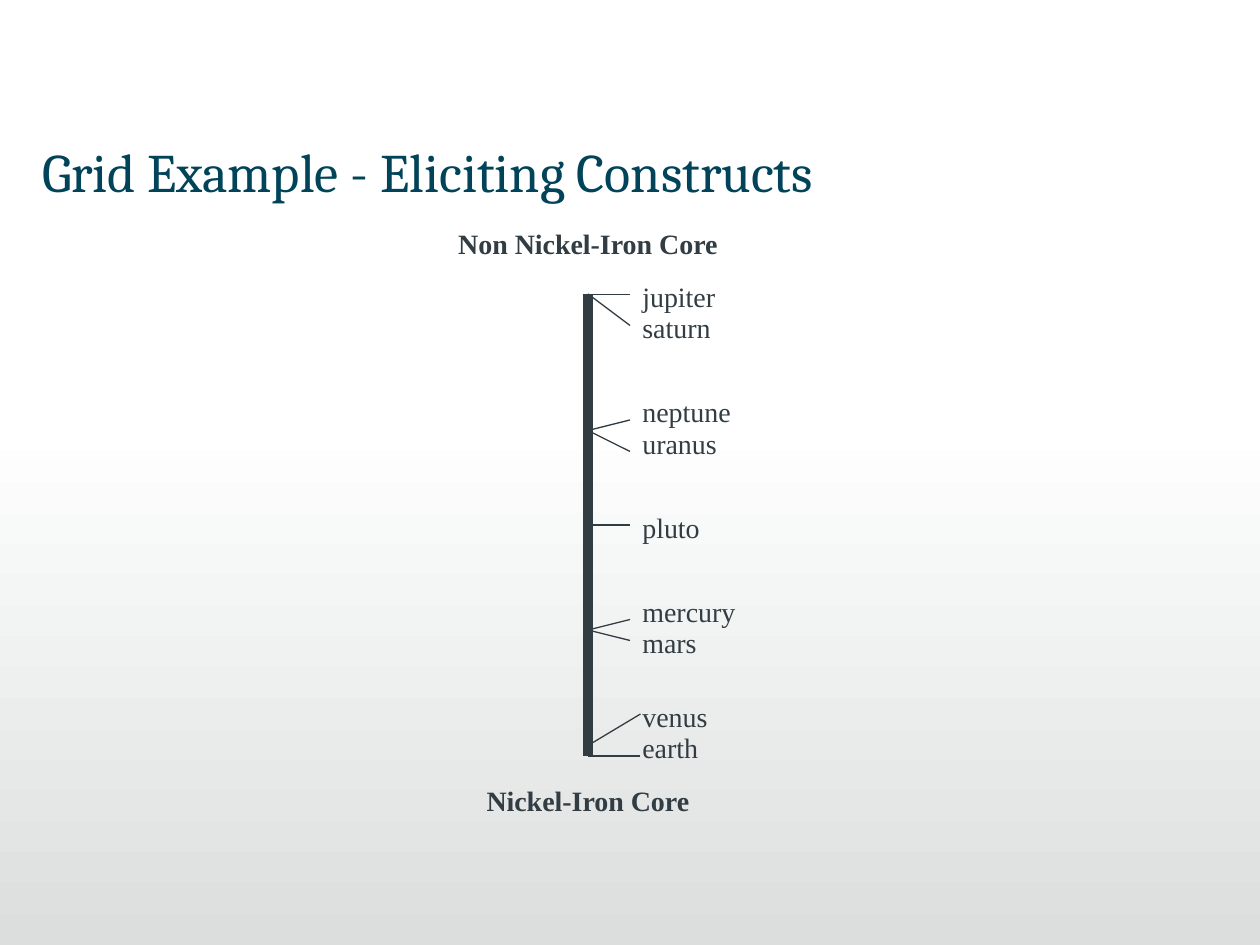
from dataclasses import dataclass

from lxml import etree
from pptx import Presentation
from pptx.dml.color import RGBColor
from pptx.enum.shapes import MSO_CONNECTOR, MSO_SHAPE
from pptx.enum.text import MSO_ANCHOR, MSO_AUTO_SIZE, PP_ALIGN
from pptx.oxml.ns import qn
from pptx.slide import Slide
from pptx.util import Pt

STRAIGHT = MSO_CONNECTOR.STRAIGHT
RECTANGLE = MSO_SHAPE.RECTANGLE
TOP, BOTTOM = MSO_ANCHOR.TOP, MSO_ANCHOR.BOTTOM
GROW, FIXED = MSO_AUTO_SIZE.SHAPE_TO_FIT_TEXT, MSO_AUTO_SIZE.NONE
LEFT, CENTER = PP_ALIGN.LEFT, PP_ALIGN.CENTER

INK, TITLE_INK = "323D43", "014359"
FADE_START, FADE_END = "FFFFFF", "DCDEDE"
AXIS_X, AXIS_TOP, AXIS_BOTTOM = 336, 168, 432
LABEL_X, LABEL_HEIGHT = 360, 26.6


@dataclass(frozen=True)
class Planet:
    """A planet's label and its tick on the construct axis."""

    name: str
    label_top: float
    axis_y: float
    tick_y: float
    tick_x: float = LABEL_X
    tick_weight: float = 0.75
    label_width: float = 66


@dataclass(frozen=True)
class Pole:
    """A heading at one end of the construct axis."""

    name: str
    left: float
    top: float
    width: float


PLANETS = [
    Planet("jupiter", 156, AXIS_TOP, 168, tick_weight=0.25),
    Planet("saturn", 174, AXIS_TOP, 186),
    Planet("neptune", 222, 246, 240),
    Planet("uranus", 240, 246, 258),
    Planet("pluto", 288, 300, 300),
    Planet("mercury", 336, 360, 354, label_width=84),
    Planet("mars", 354, 360, 366),
    Planet("venus", 396, 426, 408, tick_x=366),
    Planet("earth", 414, AXIS_BOTTOM, 432, tick_x=366),
]
POLES = [
    Pole("Non Nickel-Iron Core", 252, 126, 168),
    Pole("Nickel-Iron Core", 270, 444, 132),
]


def color(hex_value: str) -> RGBColor:
    """Turn a hex string into a colour."""
    return RGBColor.from_string(hex_value)


def add_text(slide: Slide, text: str, left: float, top: float, width: float,
             height: float = LABEL_HEIGHT, *, size: float = 16,
             font: str = "Times New Roman", ink: str = INK, bold: bool = False,
             align: PP_ALIGN = LEFT, anchor: MSO_ANCHOR = TOP,
             fit: MSO_AUTO_SIZE = GROW, inset: float = 7.2) -> None:
    """Add one line of formatted text."""
    box = slide.shapes.add_textbox(Pt(left), Pt(top), Pt(width), Pt(height))
    frame = box.text_frame
    frame.word_wrap = True
    frame.auto_size = fit
    frame.vertical_anchor = anchor
    frame.margin_left = Pt(inset)
    paragraph = frame.paragraphs[0]
    paragraph.text = text
    paragraph.alignment = align
    paragraph.font.name = font
    paragraph.font.size = Pt(size)
    paragraph.font.bold = bold
    paragraph.font.color.rgb = color(ink)


def add_line(slide: Slide, x1: float, y1: float, x2: float, y2: float,
             weight: float) -> None:
    """Add a straight line without a shadow."""
    line = slide.shapes.add_connector(STRAIGHT, Pt(x1), Pt(y1), Pt(x2), Pt(y2))
    line.line.color.rgb = color(INK)
    line.line.width = Pt(weight)
    etree.SubElement(line._element.spPr, qn("a:effectLst"))


def add_fade(slide: Slide) -> None:
    """Add the fading band behind the lower part of the slide."""
    band = slide.shapes.add_shape(RECTANGLE, Pt(-6.5), Pt(240), Pt(726.5), Pt(300))
    band.shadow.inherit = False
    band.line.fill.background()
    band.fill.gradient()
    band.fill.gradient_angle = 270
    for stop, position, shade in zip(band.fill.gradient_stops, (0, 1),
                                     (FADE_START, FADE_END)):
        stop.position = position
        stop.color.rgb = color(shade)


def add_planet(slide: Slide, planet: Planet) -> None:
    """Add a planet's label and tick."""
    add_text(slide, planet.name, LABEL_X, planet.label_top, planet.label_width)
    add_line(slide, planet.tick_x, planet.tick_y, AXIS_X, planet.axis_y,
             planet.tick_weight)


def main() -> None:
    """Build and save the slide."""
    deck = Presentation()
    deck.slide_width, deck.slide_height = Pt(720), Pt(540)
    slide = deck.slides.add_slide(deck.slide_layouts[6])
    add_fade(slide)
    add_text(slide, "Grid Example - Eliciting Constructs", 24, 72, 672, 48,
             size=31, font="Cambria", ink=TITLE_INK, anchor=BOTTOM,
             fit=FIXED, inset=0)
    add_line(slide, AXIS_X, AXIS_TOP, AXIS_X, AXIS_BOTTOM, 6)
    for pole in POLES:
        add_text(slide, pole.name, pole.left, pole.top, pole.width,
                 bold=True, align=CENTER)
    for planet in PLANETS:
        add_planet(slide, planet)
    deck.save("out.pptx")


if __name__ == "__main__":
    main()
